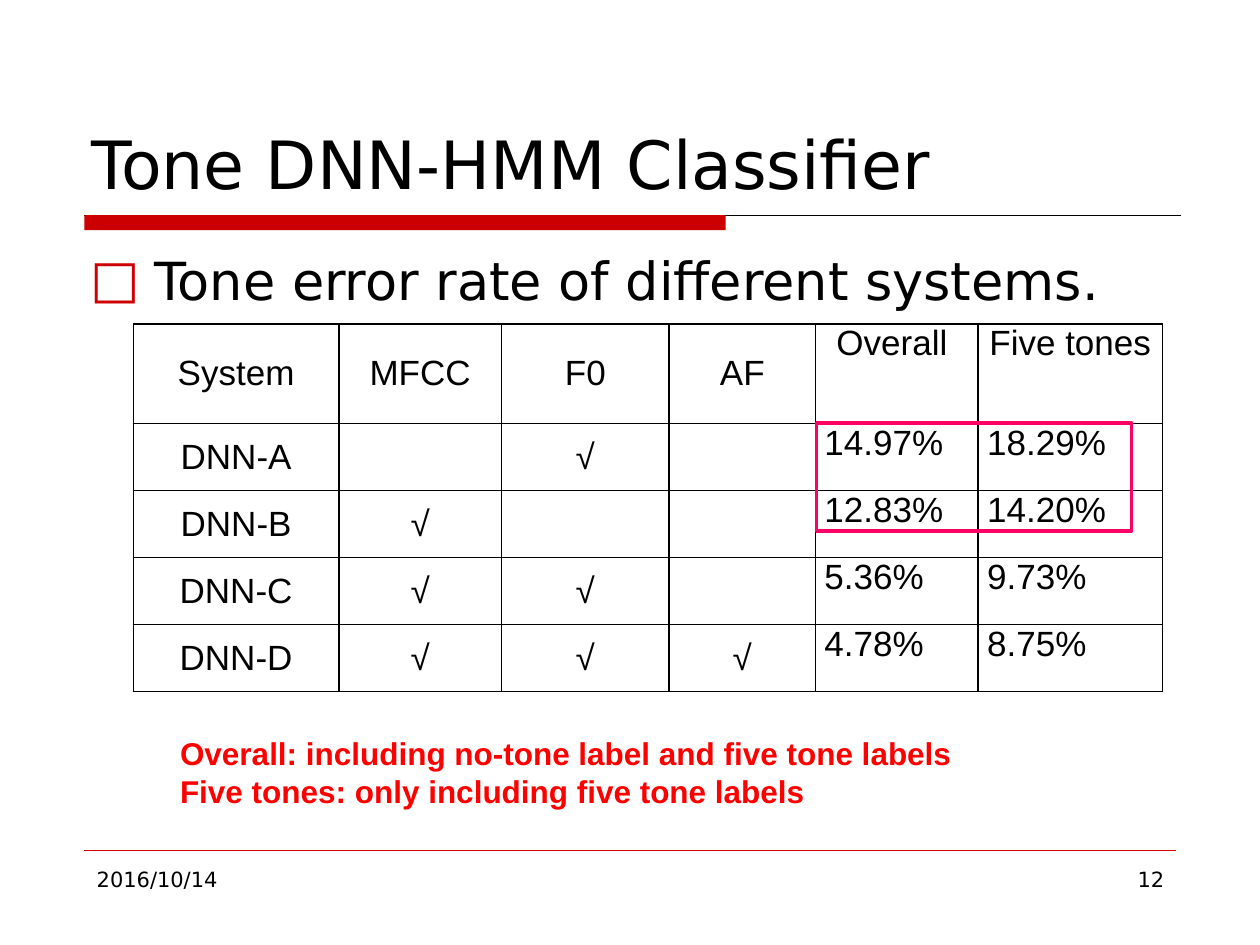
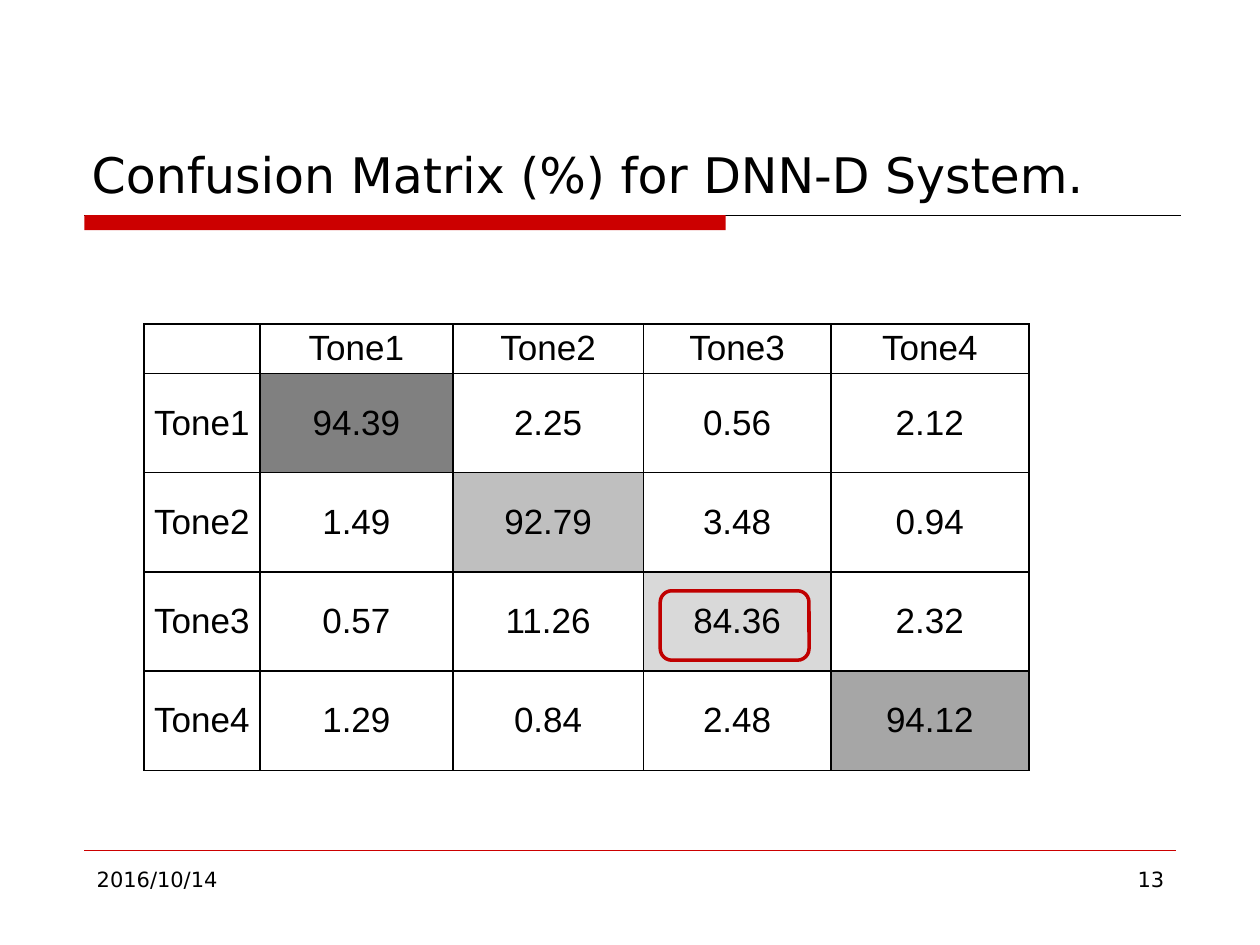
from lxml.etree import SubElement
from pptx import Presentation
from pptx.dml.color import RGBColor
from pptx.enum.shapes import MSO_CONNECTOR, MSO_SHAPE
from pptx.enum.text import MSO_ANCHOR, PP_ALIGN
from pptx.oxml.ns import qn
from pptx.util import Cm, Pt

BLACK, RED, NOTE_RED = "000000", "CC0000", "FF0000"
TITLE_FONT, TABLE_FONT = "DejaVu Sans", "Arial"
CELL_FORMAT = {"name": TABLE_FONT, "size": Pt(20)}
FOOTER_FORMAT = {"name": TITLE_FONT, "size": Pt(12)}
CELL_MARGINS = {"margin_left": Cm(0.18), "margin_right": Cm(0.18), "margin_top": 0, "margin_bottom": 0}


def paint(hex_colour):
    return RGBColor.from_string(hex_colour)


def write(frame, lines, font_format, colour=BLACK, align=PP_ALIGN.LEFT, anchor=MSO_ANCHOR.TOP):
    frame.word_wrap = True
    frame.vertical_anchor = anchor
    for index, line in enumerate(lines):
        paragraph = frame.paragraphs[0] if index == 0 else frame.add_paragraph()
        paragraph.alignment = align
        run = paragraph.add_run()
        run.text = line
        run.font.color.rgb = paint(colour)
        for attribute, value in font_format.items():
            setattr(run.font, attribute, value)
    return frame


pages = [
    {
        "title": "Tone DNN-HMM Classifier", "title_size": 38, "number": "12",
        "left": 2.69, "columns": [4.14, 3.28, 3.38, 2.95, 3.28, 3.71], "heights": [2.01] + [1.35] * 4,
        "rows": [
            ["System", "MFCC", "F0", "AF", "Overall ", "Five tones"],
            ["DNN-A", "", "√", "", "14.97%", "18.29%"],
            ["DNN-B", "√", "", "", "12.83%", "14.20%"],
            ["DNN-C", "√", "√", "", "5.36%", "9.73%"],
            ["DNN-D", "√", "√", "√", "4.78%", "8.75%"],
        ],
        "centred_columns": 4, "shades": {},
        "highlight": (MSO_SHAPE.RECTANGLE, 16.46, 8.53, 6.35, 2.18, "FF0066"),
    },
    {
        "title": "Confusion Matrix (%) for DNN-D System.", "title_size": 28, "number": "13",
        "left": 2.9, "columns": [2.34, 3.89, 3.84, 3.78, 3.99], "heights": [1] + [2] * 4,
        "rows": [
            ["", "Tone1", "Tone2", "Tone3", "Tone4"],
            ["Tone1", "94.39", "2.25", "0.56", "2.12"],
            ["Tone2", "1.49", "92.79", "3.48", "0.94"],
            ["Tone3", "0.57", "11.26", "84.36", "2.32"],
            ["Tone4", "1.29", "0.84", "2.48", "94.12"],
        ],
        "centred_columns": 5,
        "shades": {(1, 1): "808080", (2, 2): "BFBFBF", (3, 3): "D9D9D9", (4, 4): "A6A6A6"},
        "highlight": (MSO_SHAPE.ROUNDED_RECTANGLE, 13.31, 11.91, 3, 1.4, "C00000"),
    },
]

deck = Presentation()
deck.slide_width, deck.slide_height = Cm(25.4), Cm(19.05)
slides = []

for page in pages:
    slide = deck.slides.add_slide(deck.slide_layouts[6])
    slides.append(slide)

    for right, height, colour, width in [(23.8, 4.34, BLACK, 0.75), (23.7, 17.15, RED, 0.25)]:
        rule = slide.shapes.add_connector(MSO_CONNECTOR.STRAIGHT, Cm(1.7), Cm(height), Cm(right), Cm(height))
        rule.line.color.rgb = paint(colour)
        rule.line.width = Pt(width)
        SubElement(rule._element.spPr, qn("a:effectLst"))

    band = slide.shapes.add_shape(MSO_SHAPE.RECTANGLE, Cm(1.7), Cm(4.34), Cm(12.93), Cm(0.3))
    band.shadow.inherit = False
    band.fill.solid()
    band.fill.fore_color.rgb = paint(RED)
    band.line.fill.background()

    title = slide.shapes.add_textbox(Cm(1.6), Cm(0.84), Cm(22.23), Cm(3.38))
    write(title.text_frame, [page["title"]], {"name": TITLE_FONT, "size": Pt(page["title_size"])},
          anchor=MSO_ANCHOR.BOTTOM)

    for left, text, align in [(1.7, "2016/10/14", PP_ALIGN.LEFT), (18.21, page["number"], PP_ALIGN.RIGHT)]:
        footer = slide.shapes.add_textbox(Cm(left), Cm(17.35), Cm(5.51), Cm(1.32))
        write(footer.text_frame, [text], FOOTER_FORMAT, align=align)

    results = slide.shapes.add_table(
        len(page["rows"]), len(page["columns"]), Cm(page["left"]), Cm(6.53),
        Cm(sum(page["columns"])), Cm(sum(page["heights"]))).table
    results.first_row = results.horz_banding = False
    for column, width in zip(results.columns, page["columns"]):
        column.width = Cm(width)
    for row, height in zip(results.rows, page["heights"]):
        row.height = Cm(height)

    for r, values in enumerate(page["rows"]):
        for c, value in enumerate(values):
            cell = results.cell(r, c)
            for attribute, margin in CELL_MARGINS.items():
                setattr(cell, attribute, margin)
            centred = c < page["centred_columns"]
            if value:
                write(cell.text_frame, [value], CELL_FORMAT,
                      align=PP_ALIGN.CENTER if centred or r == 0 else PP_ALIGN.LEFT)
            cell.vertical_anchor = MSO_ANCHOR.MIDDLE if centred else MSO_ANCHOR.TOP
            for side in ("a:lnL", "a:lnR", "a:lnT", "a:lnB"):
                border = SubElement(cell._tc.get_or_add_tcPr(), qn(side), w=str(Pt(1)))
                SubElement(SubElement(border, qn("a:solidFill")), qn("a:srgbClr"), val=BLACK)
            if (r, c) in page["shades"]:
                cell.fill.solid()
                cell.fill.fore_color.rgb = paint(page["shades"][r, c])
            else:
                cell.fill.background()

    outline, left, top, width, height, colour = page["highlight"]
    highlight = slide.shapes.add_shape(outline, Cm(left), Cm(top), Cm(width), Cm(height))
    highlight.shadow.inherit = False
    highlight.fill.background()
    highlight.line.color.rgb = paint(colour)
    highlight.line.width = Pt(2)

topic = slides[0].shapes.add_textbox(Cm(1.57), Cm(4.88), Cm(22.23), Cm(1.6))
topic_line = write(topic.text_frame, ["Tone error rate of different systems."],
                   {"name": TITLE_FONT, "size": Pt(30)}).paragraphs[0]
topic_line.space_before = Pt(6)
bullet = topic_line._p.get_or_add_pPr()
bullet.set("marL", str(Cm(1.3)))
bullet.set("indent", str(Cm(-1.3)))
SubElement(SubElement(bullet, qn("a:buClr")), qn("a:srgbClr"), val=RED)
SubElement(bullet, qn("a:buFont"), typeface=TITLE_FONT)
SubElement(bullet, qn("a:buChar"), char="□")

legend = slides[0].shapes.add_textbox(Cm(3.38), Cm(14.68), Cm(18.47), Cm(1.8))
write(legend.text_frame,
      ["Overall: including no-tone label and five tone labels", "Five tones: only including five tone labels"],
      {"name": TABLE_FONT, "size": Pt(18), "bold": True}, NOTE_RED)

deck.save("out.pptx")
